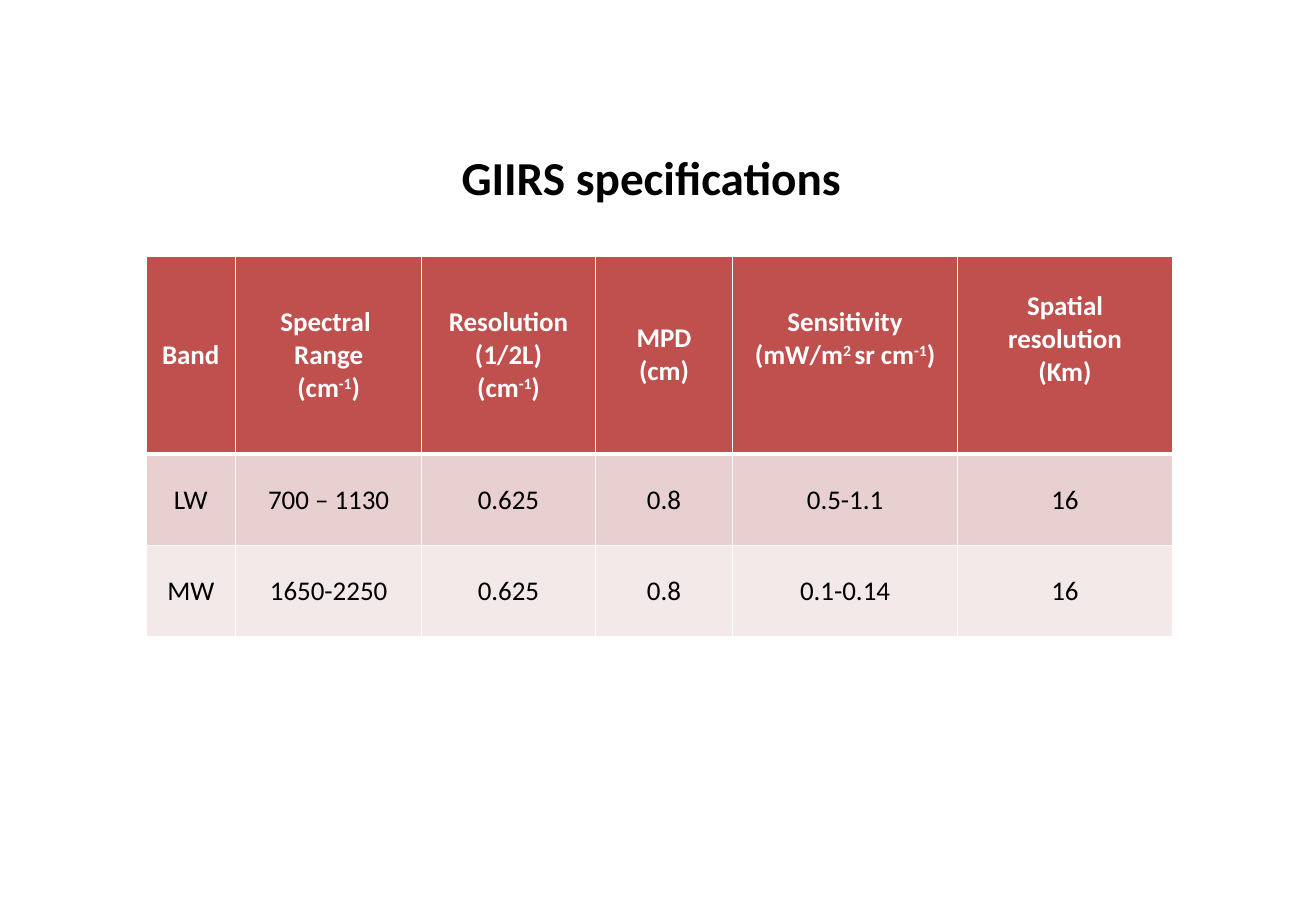
import lxml.etree
import pptx
import pptx.dml.color
import pptx.enum.text
import pptx.oxml.ns
import pptx.util

PX = 9144
FONT = "Calibri"
COLUMNS = [74, 153, 143, 113, 185, 177]
ROW_HEIGHTS = [163, 75, 75]
ROW_FILLS = ["C0504D", "E8D0D0", "F4E9E9"]
HEADER_LIFTS = [0, 0, 0, 0, 27, 27]
ROWS = [
    ["Band", "Spectral \nRange\n(cm^-1^)", "Resolution\n(1/2L)\n(cm^-1^)",
     "MPD\n(cm)", "Sensitivity\n(mW/m^2 ^sr cm^-1^)", "Spatial resolution\n(Km)"],
    ["LW", "700 – 1130", "0.625", "0.8", "0.5-1.1", "16"],
    ["MW", "1650-2250", "0.625", "0.8", "0.1-0.14", "16"],
]


def px(n):
    """Turn px into EMU."""
    return pptx.util.Emu(n * PX)


def color(value):
    """Turn a hex string into a colour."""
    return pptx.dml.color.RGBColor.from_string(value)


def style(font, size, value, bold):
    """Set the look of a font."""
    font.name = FONT
    font.size = pptx.util.Pt(size)
    font.bold = bold
    font.color.rgb = color(value)


def write(tf, text, size, value, bold):
    """Write centred lines, with ^ around each superscript."""
    for i, line in enumerate(text.split("\n")):
        p = tf.add_paragraph() if i else tf.paragraphs[0]
        p.alignment = pptx.enum.text.PP_ALIGN.CENTER
        for j, part in enumerate(line.split("^")):
            if part:
                r = p.add_run()
                r.text = part
                style(r.font, size, value, bold)
                if j % 2:
                    r.font._element.set("baseline", "30000")


def set_borders(cell, widths):
    """Give a cell white borders, with widths in points by side."""
    qn = pptx.oxml.ns.qn
    tcPr = cell._tc.get_or_add_tcPr()
    for i, (side, width) in enumerate(widths.items()):
        ln = lxml.etree.Element(qn(f"a:ln{side}"), w=str(pptx.util.Pt(width)))
        fill = lxml.etree.SubElement(ln, qn("a:solidFill"))
        lxml.etree.SubElement(fill, qn("a:srgbClr"), val="FFFFFF")
        tcPr.insert(i, ln)


def add_title(s, x, y, w, h):
    """Add the slide title in the given box."""
    tf = s.shapes.add_textbox(px(x), px(y), px(w), px(h)).text_frame
    tf.word_wrap = False
    tf.auto_size = pptx.enum.text.MSO_AUTO_SIZE.SHAPE_TO_FIT_TEXT
    tf.text = "GIIRS specifications"
    style(tf.paragraphs[0].runs[0].font, 28, "000000", True)


def add_specifications(s, x, y):
    """Add the table of band specifications at the given corner."""
    table = s.shapes.add_table(
        len(ROWS), len(COLUMNS), px(x), px(y),
        px(sum(COLUMNS)), px(sum(ROW_HEIGHTS))).table
    for column, width in zip(table.columns, COLUMNS):
        column.width = px(width)
    for i, row in enumerate(ROWS):
        table.rows[i].height = px(ROW_HEIGHTS[i])
        header = i == 0
        for j, text in enumerate(row):
            cell = table.cell(i, j)
            cell.fill.solid()
            cell.fill.fore_color.rgb = color(ROW_FILLS[i])
            cell.vertical_anchor = pptx.enum.text.MSO_ANCHOR.MIDDLE
            if header:
                cell.margin_bottom = px(5 + HEADER_LIFTS[j])
            elif j:
                cell.margin_left = cell.margin_right = px(7)
                cell.margin_top = cell.margin_bottom = px(0)
            write(cell.text_frame, text, 16, "FFFFFF" if header else "000000", header)
            set_borders(cell, {"L": 1, "R": 1, "T": 3 if i == 1 else 1,
                               "B": 3 if header else 1})


def main():
    """Build the slide and save it."""
    prs = pptx.Presentation()
    prs.slide_width, prs.slide_height = px(1083), px(750)
    s = prs.slides.add_slide(prs.slide_layouts[6])
    add_specifications(s, 120, 211)
    add_title(s, 370, 117, 337, 57)
    prs.save("out.pptx")


if __name__ == "__main__":
    main()
